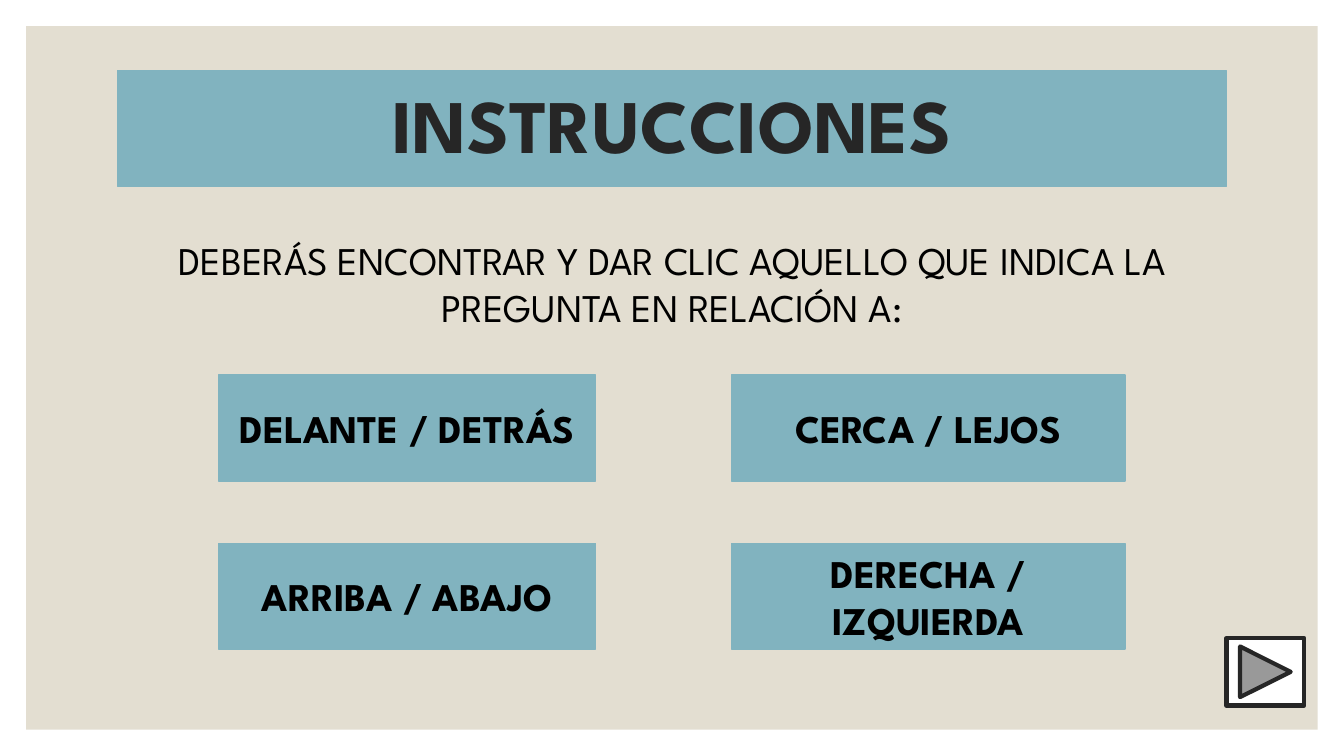
from pptx import Presentation
from pptx.dml.color import RGBColor
from pptx.enum.shapes import MSO_SHAPE
from pptx.enum.text import MSO_ANCHOR, PP_ALIGN
from pptx.util import Cm, Pt

RECTANGLE = MSO_SHAPE.RECTANGLE
NEXT_BUTTON = MSO_SHAPE.ACTION_BUTTON_FORWARD_OR_NEXT
MIDDLE, TOP = MSO_ANCHOR.MIDDLE, MSO_ANCHOR.TOP
CENTER = PP_ALIGN.CENTER

SAND = RGBColor(0xE3, 0xDE, 0xD1)
TEAL = RGBColor(0x81, 0xB3, 0xBF)
WHITE = RGBColor(0xFF, 0xFF, 0xFF)
CHARCOAL = RGBColor(0x26, 0x26, 0x26)
BLACK = RGBColor(0, 0, 0)
FONT = "League Spartan"

TITLE = "INSTRUCCIONES"
INSTRUCTION = "DEBERÁS ENCONTRAR Y DAR CLIC AQUELLO QUE INDICA LA PREGUNTA EN RELACIÓN A:"
CONCEPTS = [
    ["DELANTE / DETRÁS", "CERCA / LEJOS"],
    ["ARRIBA / ABAJO", "DERECHA / IZQUIERDA"],
]

SLIDE_WIDTH, SLIDE_HEIGHT = 33.87, 19.05
MARGIN = 0.66
CONTENT_WIDTH = 27.94
CONTENT_LEFT = (SLIDE_WIDTH - CONTENT_WIDTH) / 2
COLUMNS = [(5.51, 9.5), (18.44, 9.91)]
GRID_TOP, ROW_PITCH, BOX_HEIGHT = 9.45, 4.24, 2.67


def add_box(slide, kind, left, top, width, height, fill, line=None, line_width=1):
    shape = slide.shapes.add_shape(kind, Cm(left), Cm(top), Cm(width), Cm(height))
    shape.shadow.inherit = False
    shape.fill.solid()
    shape.fill.fore_color.rgb = fill
    if line is None:
        shape.line.fill.background()
    else:
        shape.line.color.rgb = line
        shape.line.width = Pt(line_width)
    return shape


def write(shape, text, size=28, color=BLACK, bold=True, anchor=MIDDLE):
    frame = shape.text_frame
    frame.word_wrap = True
    frame.vertical_anchor = anchor
    paragraph = frame.paragraphs[0]
    paragraph.text = text
    paragraph.alignment = CENTER
    paragraph.font.name = FONT
    paragraph.font.size = Pt(size)
    paragraph.font.bold = bold
    paragraph.font.color.rgb = color
    return paragraph


def main():
    presentation = Presentation()
    presentation.slide_width = Cm(SLIDE_WIDTH)
    presentation.slide_height = Cm(SLIDE_HEIGHT)
    slide = presentation.slides.add_slide(presentation.slide_layouts[6])

    add_box(slide, RECTANGLE, MARGIN, MARGIN, SLIDE_WIDTH - 2 * MARGIN, 17.73, SAND)

    banner = add_box(slide, RECTANGLE, CONTENT_LEFT, 1.78, CONTENT_WIDTH, 2.92, TEAL, TEAL, 0.75)
    write(banner, TITLE, 54, CHARCOAL).line_spacing = 0.9

    instruction = slide.shapes.add_textbox(Cm(CONTENT_LEFT), Cm(5.84), Cm(CONTENT_WIDTH), Cm(3.68))
    write(instruction, INSTRUCTION, bold=False, anchor=TOP)

    add_box(slide, NEXT_BUTTON, 30.91, 16.08, 1.96, 1.7, WHITE, CHARCOAL, 3)

    for row, concepts in enumerate(CONCEPTS):
        top = GRID_TOP + row * ROW_PITCH
        for (left, width), concept in zip(COLUMNS, concepts):
            box = add_box(slide, RECTANGLE, left, top, width, BOX_HEIGHT, TEAL, TEAL)
            write(box, concept)

    presentation.save("out.pptx")


if __name__ == "__main__":
    main()
